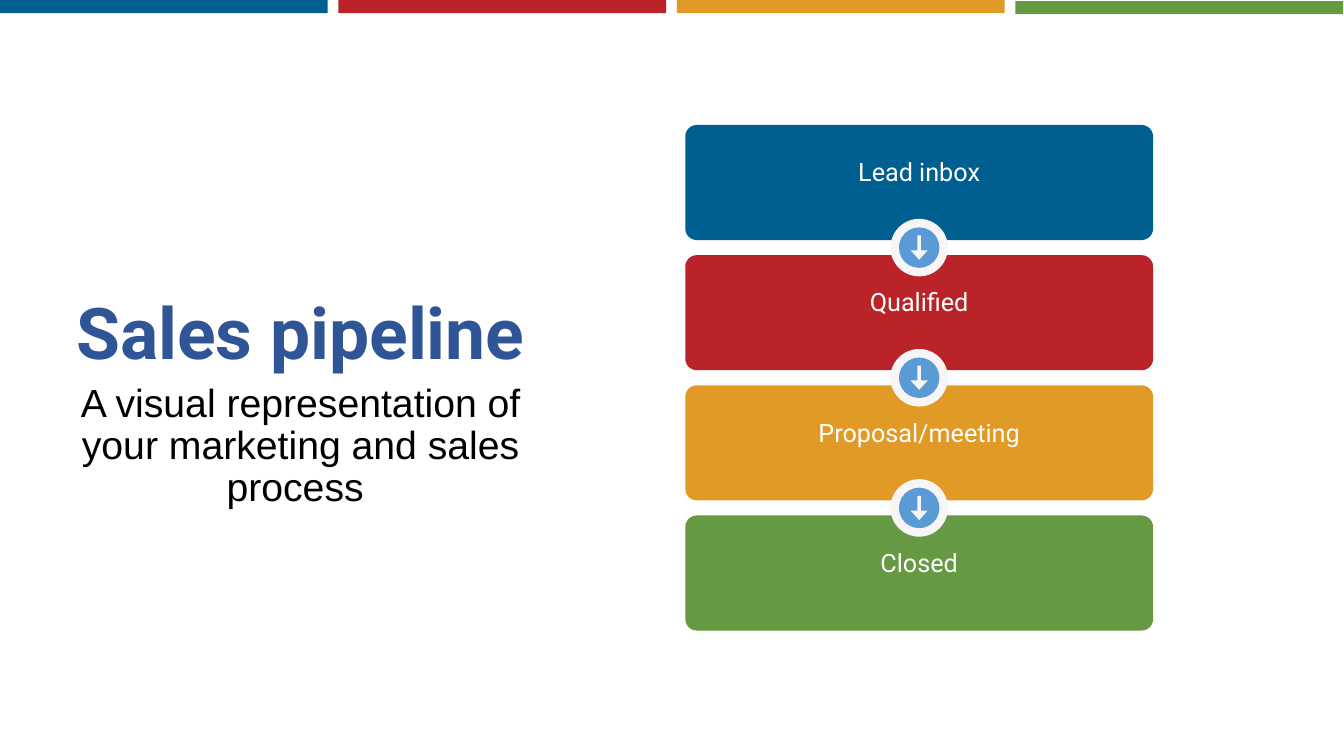
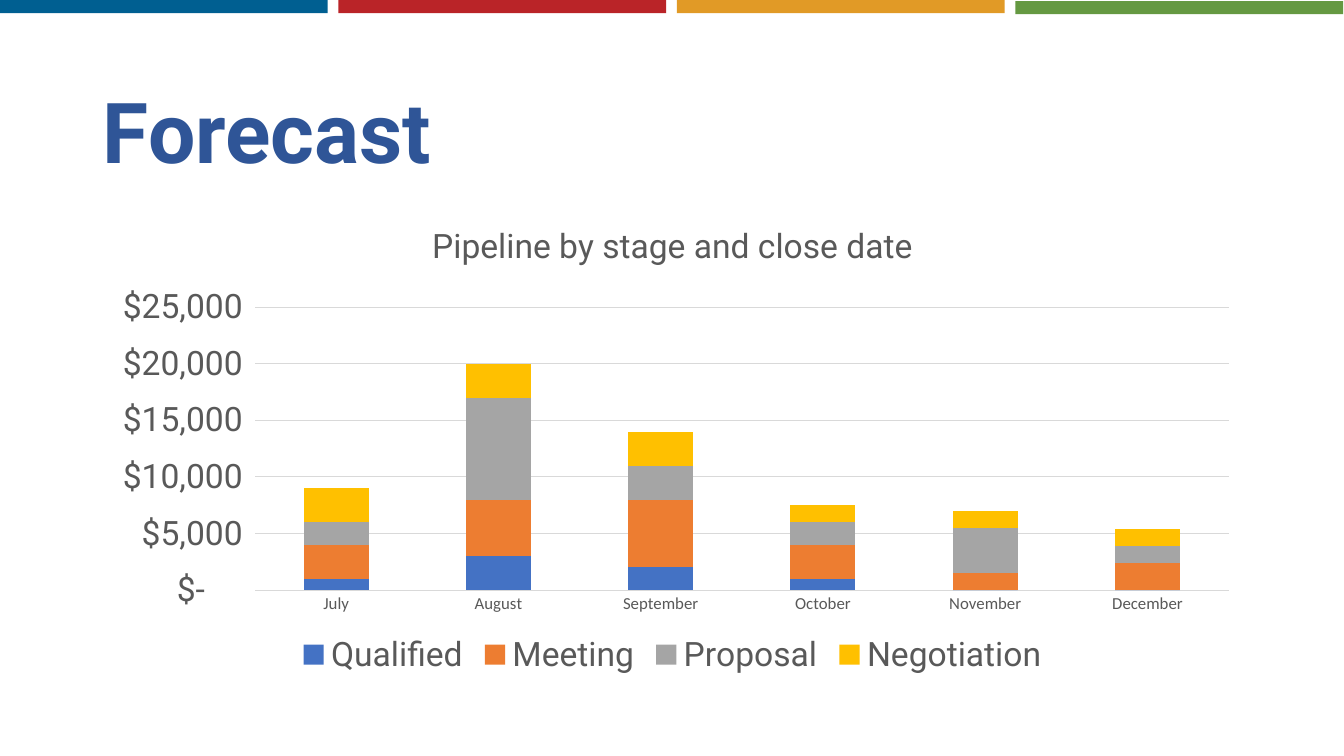
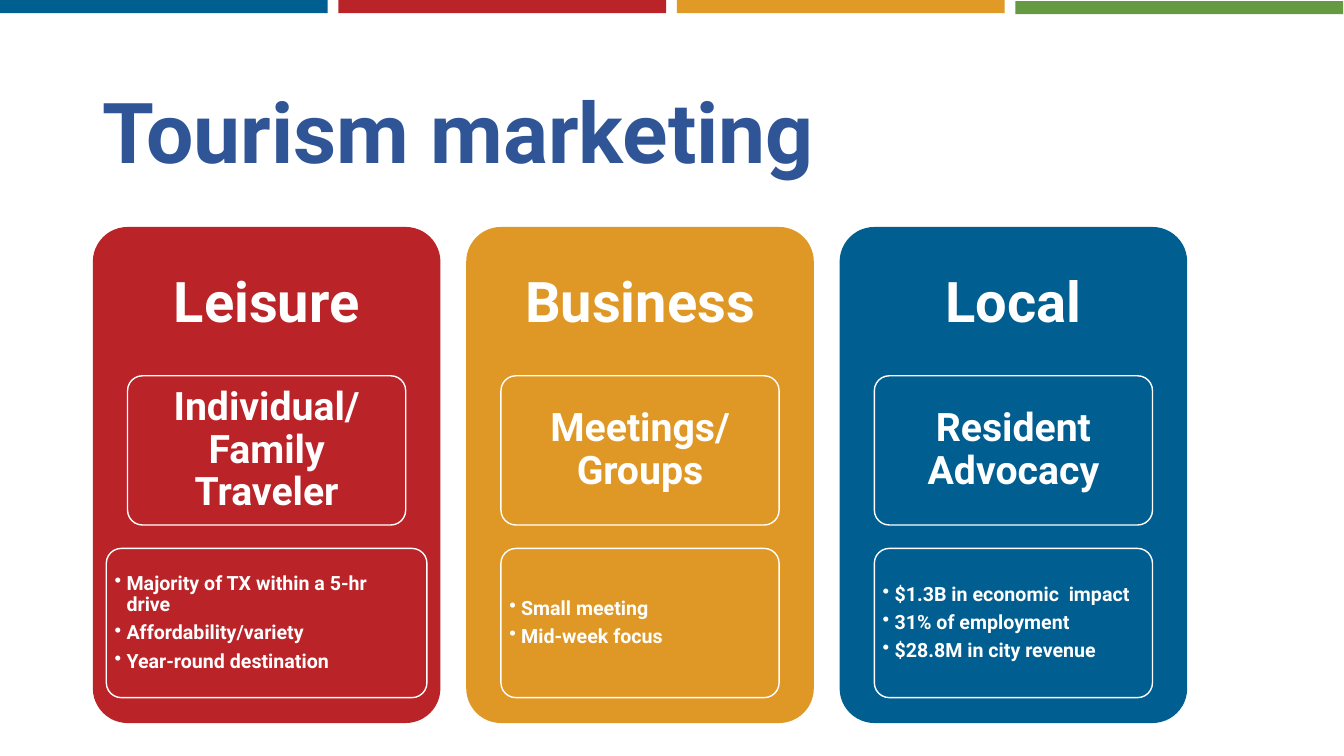
from lxml import etree
from pptx import Presentation
from pptx.chart.data import CategoryChartData
from pptx.dml.color import RGBColor
from pptx.enum.chart import XL_CHART_TYPE as ChartType
from pptx.enum.chart import XL_LEGEND_POSITION as LegendPosition
from pptx.enum.chart import XL_TICK_MARK as TickMark
from pptx.enum.shapes import MSO_SHAPE as Geometry
from pptx.enum.text import MSO_ANCHOR as Anchor
from pptx.enum.text import MSO_AUTO_SIZE as AutoSize
from pptx.enum.text import PP_ALIGN as Align
from pptx.oxml import parse_xml
from pptx.oxml.ns import nsdecls, qn
from pptx.util import Cm, Pt

color = RGBColor.from_string
BLUE, RED, GOLD, GREEN = "005F91", "BA2428", "E19A26", "659942"
TITLE_BLUE, WHITE, OFF_WHITE, ICON_BLUE = "2F5597", "FFFFFF", "F7F5F6", "5B9BD5"
TEXT_GREY, GRID_GREY = "595959", "D9D9D9"
FONT = "Roboto"
SLIDE_WIDTH, SLIDE_HEIGHT = 33.87, 19.05


def add_block(slide, geometry, left, top, width, height, fill, outline=None):
    """Add a flat preset shape, measured in centimetres."""
    shape = slide.shapes.add_shape(geometry, Cm(left), Cm(top), Cm(width), Cm(height))
    shape.shadow.inherit = False
    shape.fill.solid()
    shape.fill.fore_color.rgb = color(fill)
    if outline:
        shape.line.color.rgb = color(outline)
        shape.line.width = Pt(1)
    else:
        shape.line.fill.background()
    return shape


def write(frame, lines, size, hex_color=WHITE, bold=True, align=Align.CENTER,
          spacing=0.9, font=FONT):
    """Write one paragraph per line into the text frame."""
    frame.word_wrap = True
    frame.auto_size = AutoSize.NONE
    for index, line in enumerate(lines):
        paragraph = frame.add_paragraph() if index else frame.paragraphs[0]
        paragraph.alignment = align
        paragraph.line_spacing = spacing
        run = paragraph.add_run()
        run.text = line
        run.font.name = font
        run.font.size = Pt(size)
        run.font.bold = bold
        run.font.color.rgb = color(hex_color)


presentation = Presentation()
presentation.slide_width = Cm(SLIDE_WIDTH)
presentation.slide_height = Cm(SLIDE_HEIGHT)

# Shared title place and top bands
title_only = presentation.slide_layouts[5]
layout_title = title_only.placeholders[0]
layout_title.left, layout_title.top = Cm(2.34), Cm(1.02)
layout_title.width, layout_title.height = Cm(29.21), Cm(3.68)
layout_title.text_frame.vertical_anchor = Anchor.BOTTOM

pipeline_slide, forecast_slide, tourism_slide = [
    presentation.slides.add_slide(title_only) for _ in range(3)]

master_tree = presentation.slide_master.element.cSld.spTree
BAND_WIDTH, BAND_PITCH = 8.26, 8.53
for index, (fill, top) in enumerate([(BLUE, 0), (RED, 0), (GOLD, 0), (GREEN, 0.03)]):
    band = add_block(pipeline_slide, Geometry.RECTANGLE,
                     index * BAND_PITCH, top, BAND_WIDTH, 0.33, fill)
    master_tree.insert(2 + index, band.element)

# Slide 1: sales pipeline
title = pipeline_slide.shapes.title
title.left, title.top, title.width, title.height = Cm(1.24), Cm(6.17), Cm(12.67), Cm(3.35)
write(title.text_frame, ["Sales pipeline"], 51, TITLE_BLUE, spacing=0.8)

subtitle = pipeline_slide.shapes.add_textbox(Cm(1.24), Cm(9.53), Cm(12.67), Cm(9))
write(subtitle.text_frame, ["A visual representation of your marketing and sales process "],
      28, "000000", bold=False, font="Arial")
subtitle.text_frame.paragraphs[0].space_before = Pt(10)

STAGE_LEFT, STAGE_TOP, STAGE_WIDTH, STAGE_HEIGHT, STAGE_PITCH = 17.27, 3.15, 11.79, 2.9, 3.28
stages = [("Lead inbox", BLUE), ("Qualified", RED), ("Proposal/meeting", GOLD), ("Closed", GREEN)]
for index, (name, fill) in enumerate(stages):
    stage = add_block(pipeline_slide, Geometry.ROUNDED_RECTANGLE, STAGE_LEFT,
                      STAGE_TOP + index * STAGE_PITCH, STAGE_WIDTH, STAGE_HEIGHT, fill)
    stage.adjustments[0] = 0.1
    stage.text_frame.vertical_anchor = Anchor.TOP
    stage.text_frame.margin_top = Cm(0.71)
    write(stage.text_frame, [name], 18, bold=False, spacing=1.0)

center_x = STAGE_LEFT + STAGE_WIDTH / 2
for index in range(len(stages) - 1):
    center_y = STAGE_TOP + index * STAGE_PITCH + (STAGE_HEIGHT + STAGE_PITCH) / 2
    for geometry, width, height, fill in [(Geometry.OVAL, 1.45, 1.45, OFF_WHITE),
                                          (Geometry.OVAL, 1.02, 1.02, ICON_BLUE),
                                          (Geometry.DOWN_ARROW, 0.43, 0.61, OFF_WHITE)]:
        part = add_block(pipeline_slide, geometry, center_x - width / 2,
                         center_y - height / 2, width, height, fill)
    part.adjustments[0], part.adjustments[1] = 0.2, 0.55

# Slide 2: forecast
write(forecast_slide.shapes.title.text_frame, ["Forecast"], 60, TITLE_BLUE, align=Align.LEFT)

chart_data = CategoryChartData(
    number_format='_("$"* #,##0_);_("$"* \\(#,##0\\);_("$"* "-"??_);_(@_)')
chart_data.categories = ["July", "August", "September", "October", "November", "December"]
forecast = [
    ("Qualified", "4472C4", [1000, 3000, 2000, 1000, 0, 0]),
    ("Meeting", "ED7D31", [3000, 5000, 6000, 3000, 1500, 2400]),
    ("Proposal", "A5A5A5", [2000, 9000, 3000, 2000, 4000, 1500]),
    ("Negotiation", "FFC000", [3000, 3000, 3000, 1500, 1500, 1500]),
]
for name, _, values in forecast:
    chart_data.add_series(name, values)
chart = forecast_slide.shapes.add_chart(ChartType.COLUMN_STACKED, Cm(2.34), Cm(5.08),
                                        Cm(29.21), Cm(12.09), chart_data).chart
chart.font.name = "Calibri"
chart.font.size = Pt(10)

chart.has_title = True
write(chart.chart_title.text_frame, ["Pipeline by stage and close date"], 24, TEXT_GREY,
      bold=False, spacing=1.0)
chart.has_legend = True
chart.legend.position = LegendPosition.BOTTOM
chart.legend.include_in_layout = False

category_axis, value_axis = chart.category_axis, chart.value_axis
for font, name, size in [(chart.legend.font, FONT, 24),
                         (value_axis.tick_labels.font, FONT, 24),
                         (category_axis.tick_labels.font, "Calibri", 12)]:
    font.name = name
    font.size = Pt(size)
    font.color.rgb = color(TEXT_GREY)
for axis in (category_axis, value_axis):
    axis.major_tick_mark = axis.minor_tick_mark = TickMark.NONE
for line in (category_axis.format.line, value_axis.major_gridlines.format.line):
    line.color.rgb = color(GRID_GREY)
    line.width = Pt(0.75)
value_axis.format.line.fill.background()
value_axis.minimum_scale, value_axis.maximum_scale, value_axis.major_unit = 0, 25000, 5000

plot = chart.plots[0]
plot.gap_width, plot.overlap, plot.vary_by_categories = 150, 100, False
for series, (_, fill, _) in zip(plot.series, forecast):
    series.format.fill.solid()
    series.format.fill.fore_color.rgb = color(fill)

plot_area = chart.element.find(".//" + qn("c:plotArea"))
for old_layout in plot_area.findall(qn("c:layout")):
    plot_area.remove(old_layout)
layout = parse_xml(f"<c:layout {nsdecls('c')}><c:manualLayout/></c:layout>")
for tag, value in [("layoutTarget", "inner"), ("xMode", "edge"), ("yMode", "edge"),
                   ("x", "0.14"), ("y", "0.22"), ("w", "0.84"), ("h", "0.59")]:
    etree.SubElement(layout[0], qn("c:" + tag)).set("val", value)
plot_area.insert(0, layout)

# Slide 3: tourism marketing
write(tourism_slide.shapes.title.text_frame, ["Tourism marketing"], 60, TITLE_BLUE,
      align=Align.LEFT)

CARD_LEFT, CARD_WIDTH, CARD_PITCH = 2.34, 8.76, 9.41
markets = [
    ("Leisure", "BA2328", "Individual/ Family Traveler", 8.08,
     ["Majority of TX within a 5-hr drive", "Affordability/variety", "Year-round destination"]),
    ("Business", "DF9826", "Meetings/ Groups", 7.01, ["Small meeting", "Mid-week focus"]),
    ("Local", "005E91", "Resident Advocacy", 7.01,
     ["$1.3B in economic  impact", "31% of employment", "$28.8M in city revenue"]),
]
for index, (name, fill, audience, facts_width, facts) in enumerate(markets):
    card_left = CARD_LEFT + index * CARD_PITCH
    card = add_block(tourism_slide, Geometry.ROUNDED_RECTANGLE, card_left, 5.72,
                     CARD_WIDTH, 12.5, fill)
    card.adjustments[0] = 0.1
    card.text_frame.vertical_anchor = Anchor.TOP
    card.text_frame.margin_top = Cm(0.94)
    write(card.text_frame, [name], 40)

    for top, width, lines, size, align, margins in [
            (9.47, 7.01, [audience], 28, Align.CENTER, (0.2, 0.15, 0.2, 0.15)),
            (13.82, facts_width, facts, 14, Align.LEFT, (0.1, 0.08, 0.3, 0.08))]:
        panel = add_block(tourism_slide, Geometry.ROUNDED_RECTANGLE,
                          card_left + (CARD_WIDTH - width) / 2, top, width, 3.76, fill, WHITE)
        panel.adjustments[0] = 0.1
        frame = panel.text_frame
        frame.vertical_anchor = Anchor.MIDDLE
        (frame.margin_left, frame.margin_top,
         frame.margin_right, frame.margin_bottom) = map(Cm, margins)
        write(frame, lines, size, align=align)

    for paragraph in frame.paragraphs:
        paragraph.space_after = Pt(5)
        properties = paragraph._p.get_or_add_pPr()
        properties.set("marL", str(Cm(0.3)))
        properties.set("indent", str(-Cm(0.3)))
        etree.SubElement(properties, qn("a:buChar")).set("char", "•")

presentation.save("out.pptx")
